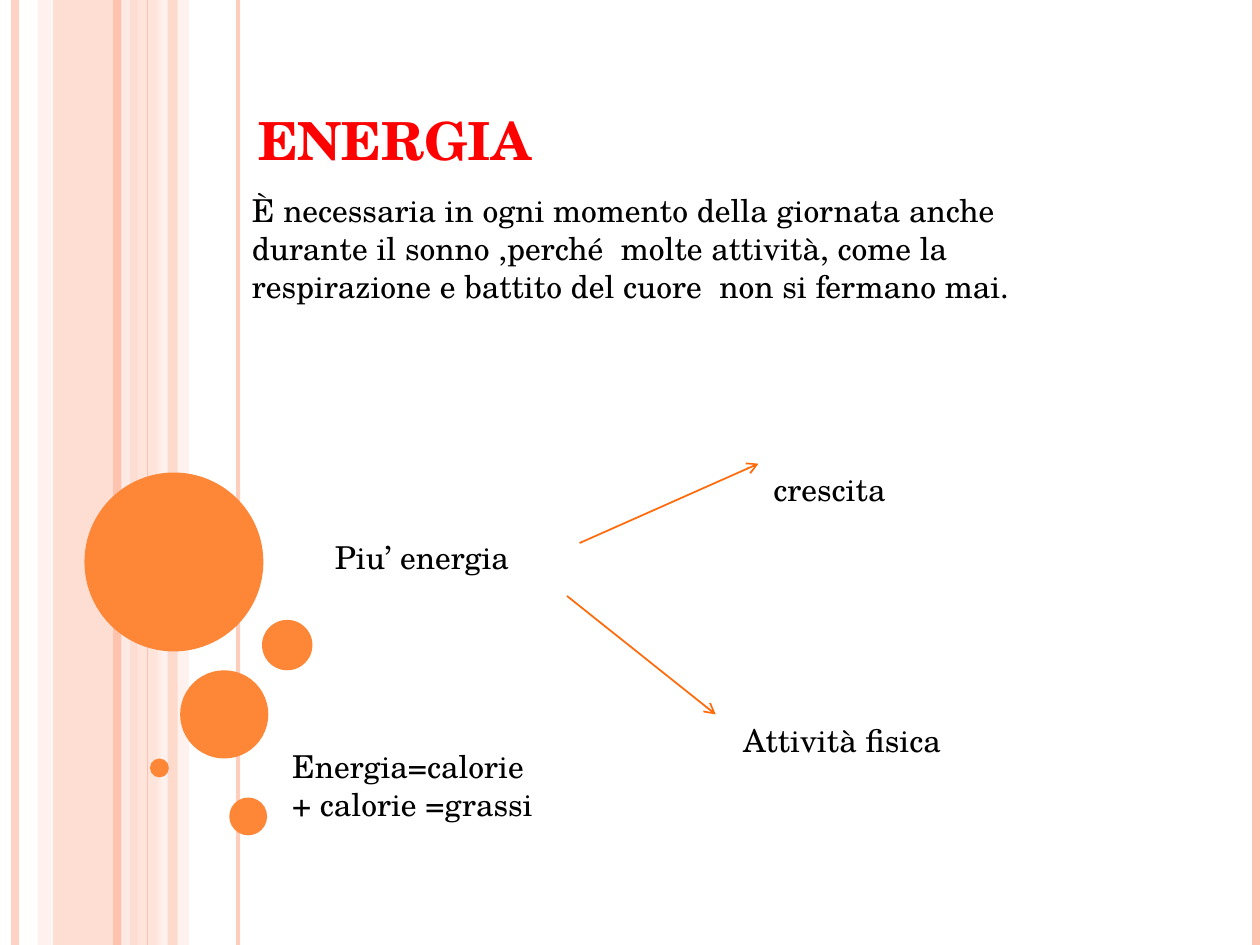
"""Builds the slide on energy, laid out on a grid of 100 columns by 75 rows."""
from dataclasses import dataclass

from lxml.etree import SubElement
from pptx import Presentation
from pptx.dml.color import RGBColor
from pptx.enum.shapes import MSO_CONNECTOR as Connector, MSO_SHAPE as Preset
from pptx.enum.text import MSO_ANCHOR as Anchor
from pptx.oxml.ns import qn
from pptx.util import Inches, Pt

COLUMNS, ROWS = 100, 75
CELL = Inches(0.1)


@dataclass(frozen=True)
class Theme:
    font: str = "TeX Gyre Schola"
    title_size: float = 30
    body_size: float = 18
    title: str = "FF0000"
    text: str = "000000"
    bubble: str = "FE8637"
    arrow: str = "FF6B0A"
    strong: str = "FEC3AE"
    medium: str = "FFD9CE"
    pale: str = "FFEDE8"


THEME = Theme()


@dataclass(frozen=True)
class Band:
    column: float
    columns: float
    color: str
    opacity: int


@dataclass(frozen=True)
class Stripe:
    column: float
    color: str
    points: float = 4.5
    opacity: int = 100


@dataclass(frozen=True)
class Bubble:
    column: float
    row: float
    diameter: float


@dataclass(frozen=True)
class Arrow:
    start: tuple[float, float]
    end: tuple[float, float]


@dataclass(frozen=True)
class Label:
    column: float
    row: float
    columns: float
    rows: float
    lines: tuple[str, ...]
    size: float = THEME.body_size
    color: str = THEME.text
    bold: bool = False
    anchor: Anchor = Anchor.TOP


BANDS = (
    Band(4.2, 6.7, THEME.strong, 54),
    Band(3, 1.1, THEME.medium, 36),
    Band(10.8, 2, THEME.medium, 70),
    Band(12.5, 2.5, THEME.pale, 71),
)
STRIPES = (
    Stripe(1.2, THEME.strong, opacity=73),
    Stripe(10, THEME.pale, opacity=83),
    Stripe(9.3, THEME.strong),
    Stripe(18.9, THEME.strong, 2.25, 82),
    Stripe(11.7, THEME.strong, 0.75),
    Stripe(99.7, THEME.strong),
)
TOP_BAND = Band(13.3, 0.8, THEME.strong, 51)
BUBBLES = (
    Bubble(6.7, 37.5, 14.2),
    Bubble(14.3, 53.2, 7),
    Bubble(11.9, 60.2, 1.5),
    Bubble(18.2, 63.3, 3),
    Bubble(20.8, 49.2, 4),
)
ARROWS = (
    Arrow((46, 43.1), (60.2, 36.8)),
    Arrow((45, 47.3), (56.8, 56.7)),
)
LABELS = (
    Label(19.5, 4, 67.5, 10.1, ("ENERGIA",),
          THEME.title_size, THEME.title, True, Anchor.BOTTOM),
    Label(19, 14.7, 63.8, 13.1, (
        "È necessaria in ogni momento della giornata anche durante il sonno "
        ",perché  molte attività, come la respirazione e battito del cuore  "
        "non si fermano mai.",)),
    Label(25.6, 42.2, 20.5, 4, ("Piu’ energia",)),
    Label(60.4, 36.8, 16.5, 4, ("crescita",)),
    Label(58, 56.7, 22.1, 4, ("Attività fisica",)),
    Label(22.2, 58.8, 28.6, 7.1, ("Energia=calorie", "+ calorie =grassi")),
)


def grid(*cells: float) -> list[int]:
    """Turn grid cells into slide lengths."""
    return [round(cell * CELL) for cell in cells]


def set_opacity(properties, opacity: int) -> None:
    """Make the solid colour under the given element see-through."""
    color = next(properties.iter(qn("a:srgbClr")))
    SubElement(color, qn("a:alpha"), val=str(opacity * 1000))


def draw_shape(slide, preset: Preset, box: list[int], color: str):
    """Draw a flat, unlined preset shape."""
    shape = slide.shapes.add_shape(preset, *box)
    shape.shadow.inherit = False
    shape.fill.solid()
    shape.fill.fore_color.rgb = RGBColor.from_string(color)
    shape.line.fill.background()
    return shape


def draw_band(slide, band: Band) -> None:
    """Draw a translucent band over the full height."""
    box = grid(band.column, 0, band.columns, ROWS)
    shape = draw_shape(slide, Preset.RECTANGLE, box, band.color)
    set_opacity(shape._element.spPr, band.opacity)


def draw_line(slide, ends: list[int], color: str, points: float):
    """Draw a straight line without a shadow."""
    connector = slide.shapes.add_connector(Connector.STRAIGHT, *ends)
    connector.line.color.rgb = RGBColor.from_string(color)
    connector.line.width = Pt(points)
    SubElement(connector._element.spPr, qn("a:effectLst"))
    return connector


def draw_stripe(slide, stripe: Stripe) -> None:
    """Draw a vertical line over the full height."""
    ends = grid(stripe.column, 0, stripe.column, ROWS)
    connector = draw_line(slide, ends, stripe.color, stripe.points)
    if stripe.opacity < 100:
        set_opacity(connector._element.spPr, stripe.opacity)


def draw_bubble(slide, bubble: Bubble) -> None:
    """Draw a filled circle."""
    box = grid(bubble.column, bubble.row, bubble.diameter, bubble.diameter)
    draw_shape(slide, Preset.OVAL, box, THEME.bubble)


def draw_arrow(slide, arrow: Arrow) -> None:
    """Draw a thin line with an open arrowhead at its end."""
    connector = draw_line(slide, grid(*arrow.start, *arrow.end), THEME.arrow, 1)
    SubElement(connector.line._get_or_add_ln(), qn("a:tailEnd"), type="arrow")


def draw_label(slide, label: Label) -> None:
    """Write a text box with one paragraph for each line."""
    box = grid(label.column, label.row, label.columns, label.rows)
    text_frame = slide.shapes.add_textbox(*box).text_frame
    text_frame.word_wrap = True
    text_frame.vertical_anchor = label.anchor
    text_frame.text = "\n".join(label.lines)
    for paragraph in text_frame.paragraphs:
        for run in paragraph.runs:
            run.font.name = THEME.font
            run.font.size = Pt(label.size)
            run.font.bold = label.bold
            run.font.color.rgb = RGBColor.from_string(label.color)


def main() -> None:
    """Build and save the presentation."""
    presentation = Presentation()
    presentation.slide_width, presentation.slide_height = grid(COLUMNS, ROWS)
    slide = presentation.slides.add_slide(presentation.slide_layouts[6])
    for draw, items in (
        (draw_band, BANDS),
        (draw_stripe, STRIPES),
        (draw_band, (TOP_BAND,)),
        (draw_bubble, BUBBLES),
        (draw_arrow, ARROWS),
        (draw_label, LABELS),
    ):
        for item in items:
            draw(slide, item)
    presentation.save("out.pptx")


if __name__ == "__main__":
    main()
